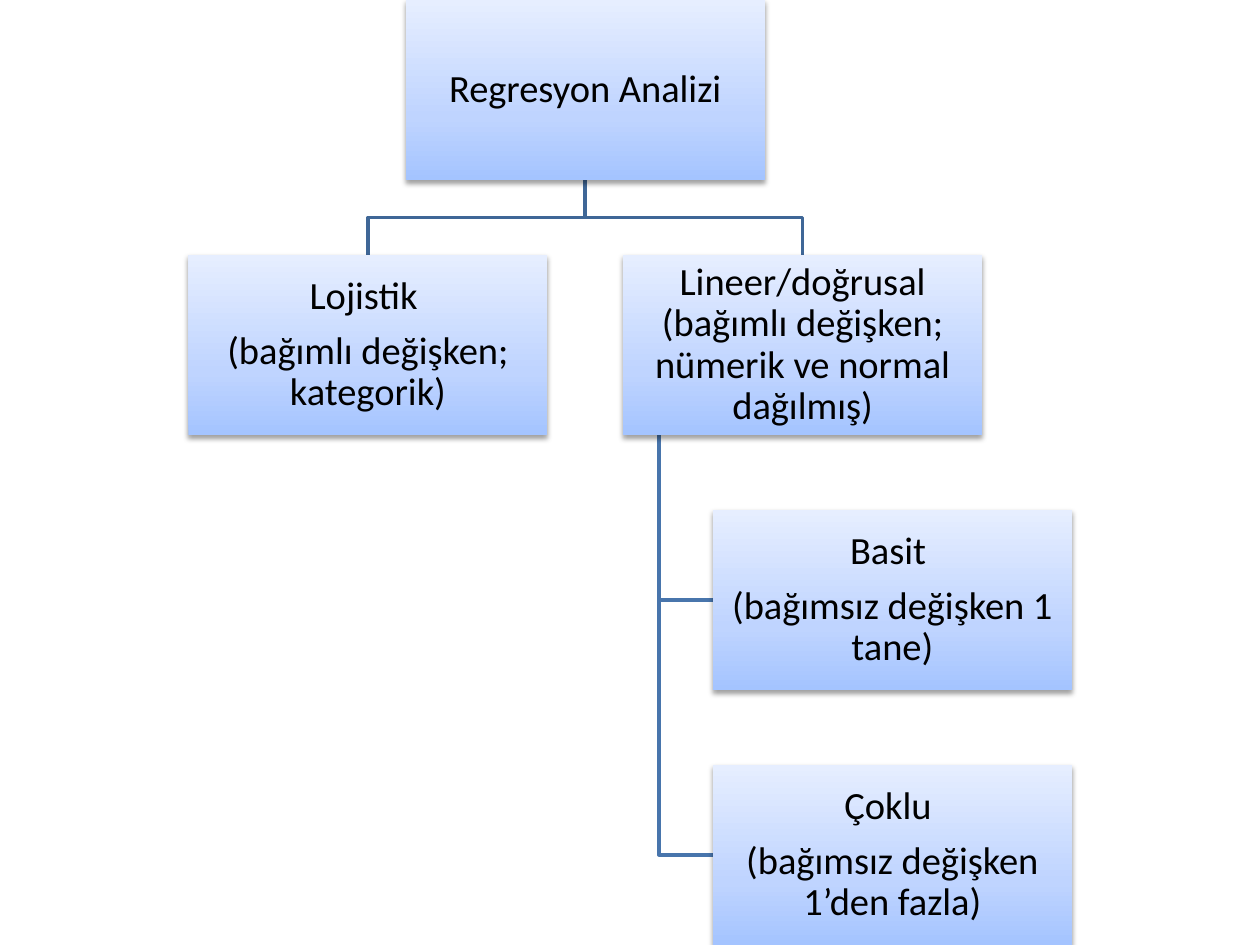
"""Build the slide with the tree of regression analysis types."""
from copy import deepcopy
from dataclasses import dataclass

from lxml.etree import SubElement
from pptx import Presentation
from pptx.dml.color import RGBColor
from pptx.enum.shapes import MSO_SHAPE
from pptx.enum.text import MSO_ANCHOR, PP_ALIGN
from pptx.oxml.ns import qn
from pptx.util import Inches, Pt

SLIDE_WIDTH, SLIDE_HEIGHT = 10, 7.5
BOX_WIDTH, BOX_HEIGHT = 2.85, 1.43
ROW_PITCH = (SLIDE_HEIGHT - BOX_HEIGHT) / 3
COLUMN_PITCH = 3.45
ROOT_LEFT = 3.22
LOGISTIC_LEFT = ROOT_LEFT - COLUMN_PITCH / 2
LINEAR_LEFT = ROOT_LEFT + COLUMN_PITCH / 2
LEAF_LEFT = LINEAR_LEFT + BOX_WIDTH / 4
TRUNK_LEFT = LINEAR_LEFT + BOX_WIDTH / 10

BOXES = [
    (ROOT_LEFT, 0, ["Regresyon Analizi"]),
    (LOGISTIC_LEFT, 1, ["Lojistik ", "(bağımlı değişken; kategorik)"]),
    (LINEAR_LEFT, 1, ["Lineer/doğrusal (bağımlı değişken; nümerik ve normal dağılmış)"]),
    (LEAF_LEFT, 2, ["Basit ", "(bağımsız değişken 1 tane)"]),
    (LEAF_LEFT, 3, ["Çoklu ", "(bağımsız değişken 1’den fazla)"]),
]


@dataclass(frozen=True)
class Theme:
    font: str = "Calibri"
    text_size: float = 22
    line_width: float = 2
    text: str = "000000"
    shadow: str = "000000"
    leaf_line: str = "4875AC"
    branch_line: str = "3F6797"
    gradient: tuple = ((0, "A4C4FF"), (0.35, "BFD4FF"), (1, "E6EEFF"))


class TreeSlide:
    def __init__(self, slide, theme):
        self.slide = slide
        self.theme = theme

    def add_link(self, points, color):
        corners = [(Inches(x), Inches(y)) for x, y in points]
        builder = self.slide.shapes.build_freeform(*corners[0])
        builder.add_line_segments(corners[1:], close=False)
        shape = builder.convert_to_shape()
        shape.shadow.inherit = False
        shape.fill.background()
        shape.line.color.rgb = RGBColor.from_string(color)
        shape.line.width = Pt(self.theme.line_width)

    def add_box(self, left, top, lines):
        shape = self.slide.shapes.add_shape(
            MSO_SHAPE.RECTANGLE,
            Inches(left), Inches(top), Inches(BOX_WIDTH), Inches(BOX_HEIGHT),
        )
        shape.line.fill.background()
        self.fill_gradient(shape)
        self.add_shadow(shape)
        self.add_text(shape.text_frame, lines)

    def fill_gradient(self, shape):
        shape.fill.gradient()
        shape.fill.gradient_angle = 90
        stop_list = shape._element.spPr.find(".//" + qn("a:gsLst"))
        stop_list.append(deepcopy(stop_list[-1]))
        for stop, (position, color) in zip(shape.fill.gradient_stops, self.theme.gradient):
            stop.position = position
            stop.color.rgb = RGBColor.from_string(color)

    def add_shadow(self, shape):
        shape.shadow.inherit = False
        effects = shape._element.spPr.find(qn("a:effectLst"))
        shadow = SubElement(
            effects, qn("a:outerShdw"),
            blurRad=str(Pt(3.1)), dist=str(Pt(1.6)), dir="5400000", rotWithShape="0",
        )
        color = SubElement(shadow, qn("a:srgbClr"), val=self.theme.shadow)
        SubElement(color, qn("a:alpha"), val="38000")

    def add_text(self, frame, lines):
        frame.word_wrap = True
        frame.vertical_anchor = MSO_ANCHOR.MIDDLE
        frame.margin_left = frame.margin_right = Inches(0.02)
        frame.margin_top = frame.margin_bottom = Inches(0.02)
        for index, line in enumerate(lines):
            paragraph = frame.add_paragraph() if index else frame.paragraphs[0]
            paragraph.alignment = PP_ALIGN.CENTER
            paragraph.line_spacing = 0.9
            spacing = SubElement(paragraph._p.get_or_add_pPr(), qn("a:spcAft"))
            SubElement(spacing, qn("a:spcPct"), val="35000")
            run = paragraph.add_run()
            run.text = line
            run.font.name = self.theme.font
            run.font.size = Pt(self.theme.text_size)
            run.font.color.rgb = RGBColor.from_string(self.theme.text)


def main():
    presentation = Presentation()
    presentation.slide_width = Inches(SLIDE_WIDTH)
    presentation.slide_height = Inches(SLIDE_HEIGHT)
    theme = Theme()
    tree = TreeSlide(presentation.slides.add_slide(presentation.slide_layouts[6]), theme)

    linear_bottom = ROW_PITCH + BOX_HEIGHT
    for row in (3, 2):
        middle = row * ROW_PITCH + BOX_HEIGHT / 2
        tree.add_link(
            [(TRUNK_LEFT, linear_bottom), (TRUNK_LEFT, middle), (LEAF_LEFT, middle)],
            theme.leaf_line,
        )

    root_center = ROOT_LEFT + BOX_WIDTH / 2
    bend = (BOX_HEIGHT + ROW_PITCH) / 2
    for left in (LINEAR_LEFT, LOGISTIC_LEFT):
        center = left + BOX_WIDTH / 2
        tree.add_link(
            [(root_center, BOX_HEIGHT), (root_center, bend), (center, bend), (center, ROW_PITCH)],
            theme.branch_line,
        )

    for left, row, lines in BOXES:
        tree.add_box(left, row * ROW_PITCH, lines)

    presentation.save("out.pptx")


if __name__ == "__main__":
    main()
